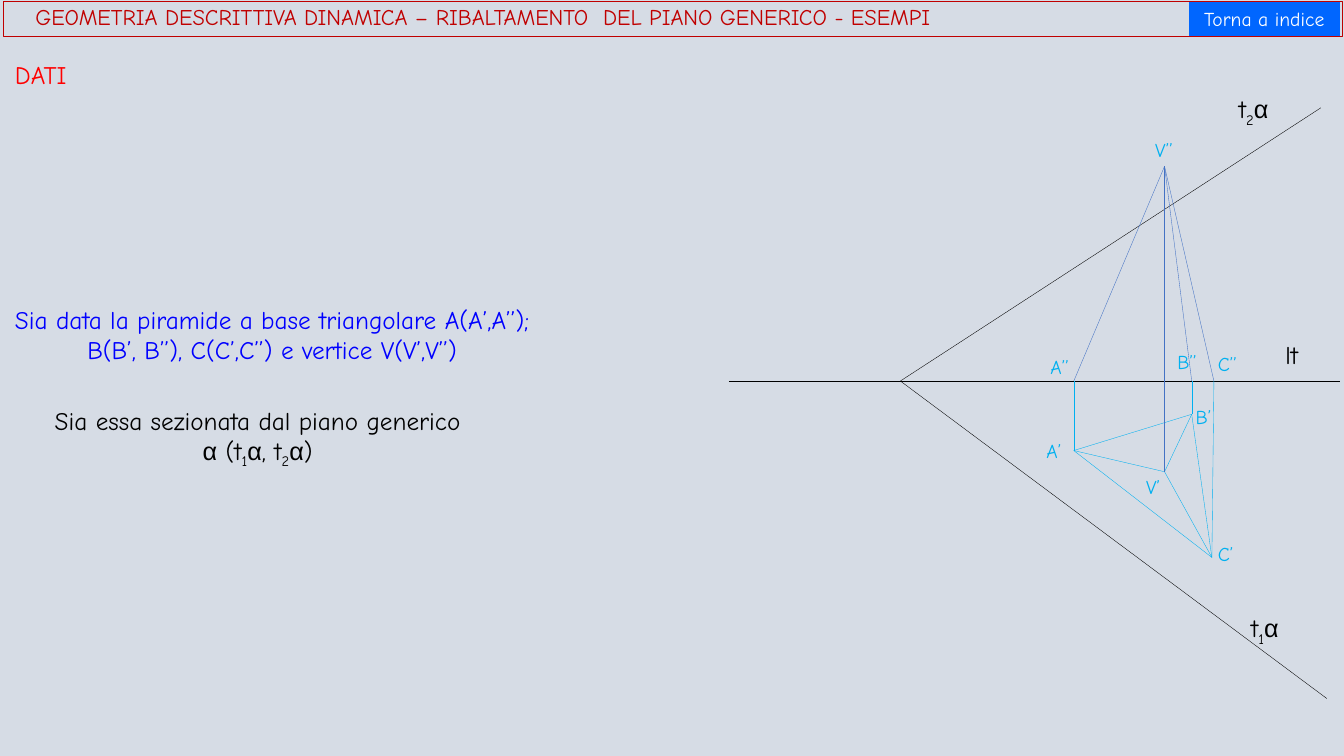
import itertools

import pptx
import pptx.dml.color
import pptx.enum.shapes
import pptx.enum.text
import pptx.oxml
import pptx.oxml.ns
import pptx.util

PX = 9144
FONT = "Comic Neue"
BLACK, CYAN, BLUE, RED = "000000", "00B0F0", "4472C4", "C00000"
SHAPE = pptx.enum.shapes.MSO_SHAPE
LEFT = pptx.enum.text.PP_ALIGN.LEFT
CENTER = pptx.enum.text.PP_ALIGN.CENTER

ORIGIN = (893, 378)
POINTS = {
    "A’": (1065, 447), "B’": (1182, 411), "C’": (1202, 553), "V’": (1155, 468),
    "A’’": (1065, 378), "B’’": (1182, 378), "C’’": (1204, 378), "V’’": (1155, 165),
}
LABELS = {
    "C’": (1198, 533), "B’": (1176, 397), "A’": (1028, 431), "C’’": (1198, 344),
    "B’’": (1158, 342), "A’’": (1032, 347), "V’’": (1136, 132), "V’": (1127, 466),
}


def emu(*lengths):
    """Turn px lengths into EMU."""
    return [n * PX for n in lengths]


def rgb(value):
    """Turn a hex string into a colour."""
    return pptx.dml.color.RGBColor.from_string(value)


def style_of(char):
    """Tell Greek letters and subscript digits from plain text."""
    return "greek" if char == "α" else "sub" if char.isdigit() else "plain"


def add_runs(p, text, size, color, align):
    """Fill a paragraph, setting Greek in Arial and digits as subscripts."""
    p.alignment = align
    for style, chars in itertools.groupby(text, style_of):
        r = p.add_run()
        r.text = "".join(chars)
        r.font.size = pptx.util.Pt(size)
        r.font.name = "Arial" if style == "greek" else FONT
        r.font.color.rgb = rgb(color)
        if style == "sub":
            r._r.get_or_add_rPr().set("baseline", "-25000")


def add_text(s, box, lines, size, color, align=LEFT):
    """Add a text box with one paragraph per line."""
    tf = s.shapes.add_textbox(*emu(*box)).text_frame
    tf.word_wrap = True
    tf.auto_size = pptx.enum.text.MSO_AUTO_SIZE.SHAPE_TO_FIT_TEXT
    for i, line in enumerate(lines):
        p = tf.add_paragraph() if i else tf.paragraphs[0]
        add_runs(p, line, size, color, align)


def add_line(s, start, end, color):
    """Add a thin straight line."""
    sp = s.shapes.add_connector(
        pptx.enum.shapes.MSO_CONNECTOR.STRAIGHT, *emu(*start, *end))
    sp.line.color.rgb = rgb(color)
    sp.line.width = pptx.util.Pt(0.25)
    sp._element.spPr.append(
        pptx.oxml.parse_xml("<a:effectLst %s/>" % pptx.oxml.ns.nsdecls("a")))


def paint(sp, fill, line):
    """Set the fill and the thin outline of a shape, or remove them."""
    sp.shadow.inherit = False
    if fill:
        sp.fill.solid()
        sp.fill.fore_color.rgb = rgb(fill)
    else:
        sp.fill.background()
    if line:
        sp.line.color.rgb = rgb(line)
        sp.line.width = pptx.util.Pt(0.25)
    else:
        sp.line.fill.background()


def add_bar(s, kind, box, text, size, color, align, fill=None, line=None):
    """Add a shape with vertically centred text."""
    sp = s.shapes.add_shape(kind, *emu(*box))
    paint(sp, fill, line)
    tf = sp.text_frame
    tf.word_wrap = True
    tf.vertical_anchor = pptx.enum.text.MSO_ANCHOR.MIDDLE
    add_runs(tf.paragraphs[0], text, size, color, align)
    return sp


def add_outline(s, corners, color):
    """Add a closed unfilled polygon."""
    builder = s.shapes.build_freeform(*corners[0], scale=PX)
    builder.add_line_segments(corners[1:], close=True)
    paint(builder.convert_to_shape(), None, color)


def add_pyramid(s):
    """Draw both projections of the pyramid and name their points."""
    add_outline(s, [POINTS[name + "’"] for name in "ABC"], CYAN)
    for name in "ABC":
        low, high = name + "’", name + "’’"
        add_line(s, POINTS[low], POINTS["V’"], CYAN)
        add_line(s, POINTS[high], POINTS["V’’"], BLUE)
        add_line(s, POINTS[low], POINTS[high], CYAN)
    add_line(s, POINTS["V’"], POINTS["V’’"], BLUE)
    for name, at in LABELS.items():
        add_text(s, (*at, 53, 34), [name], 14, CYAN)


def add_plane(s):
    """Draw the ground line and the two traces of the plane."""
    add_line(s, (723, 378), (1329, 378), BLACK)
    for end in ((1310, 107), (1316, 693)):
        add_line(s, ORIGIN, end, BLACK)
    add_text(s, (1231, 603, 56, 40), ["t1α"], 18, BLACK)
    add_text(s, (1265, 332, 56, 40), ["lt"], 18, BLACK)
    add_text(s, (1219, 88, 86, 40), ["t2α"], 18, BLACK)


def main():
    """Build the slide and save it."""
    prs = pptx.Presentation()
    prs.slide_width, prs.slide_height = emu(1333, 750)
    s = prs.slides.add_slide(prs.slide_layouts[6])
    s.background.fill.solid()
    s.background.fill.fore_color.rgb = rgb("D6DCE5")

    add_plane(s)
    add_pyramid(s)
    add_bar(s, SHAPE.ACTION_BUTTON_CUSTOM, (1179, 1, 150, 35),
            "Torna a indice", 14, "FFFFFF", CENTER, fill="0066FF")
    add_text(s, (0, 297, 540, 71),
             ["Sia data la piramide a base triangolare A(A’,A’’); "
              "B(B’, B’’), C(C’,C’’) e vertice V(V’,V’’)"],
             18, "0000FF", CENTER)
    add_text(s, (0, 397, 511, 71),
             ["Sia essa sezionata dal piano generico", "α (t1α, t2α)"],
             18, BLACK, CENTER)
    title = add_bar(
        s, SHAPE.RECTANGLE, (3, 1, 1328, 35),
        "GEOMETRIA DESCRITTIVA DINAMICA – RIBALTAMENTO  DEL PIANO GENERICO - ESEMPI",
        16, RED, LEFT, line=RED)
    title.text_frame.margin_left = 32 * PX
    title.text_frame.paragraphs[0].line_spacing = 0.9
    add_text(s, (5, 54, 98, 40), ["DATI"], 18, "FF0000")
    prs.save("out.pptx")


if __name__ == "__main__":
    main()
